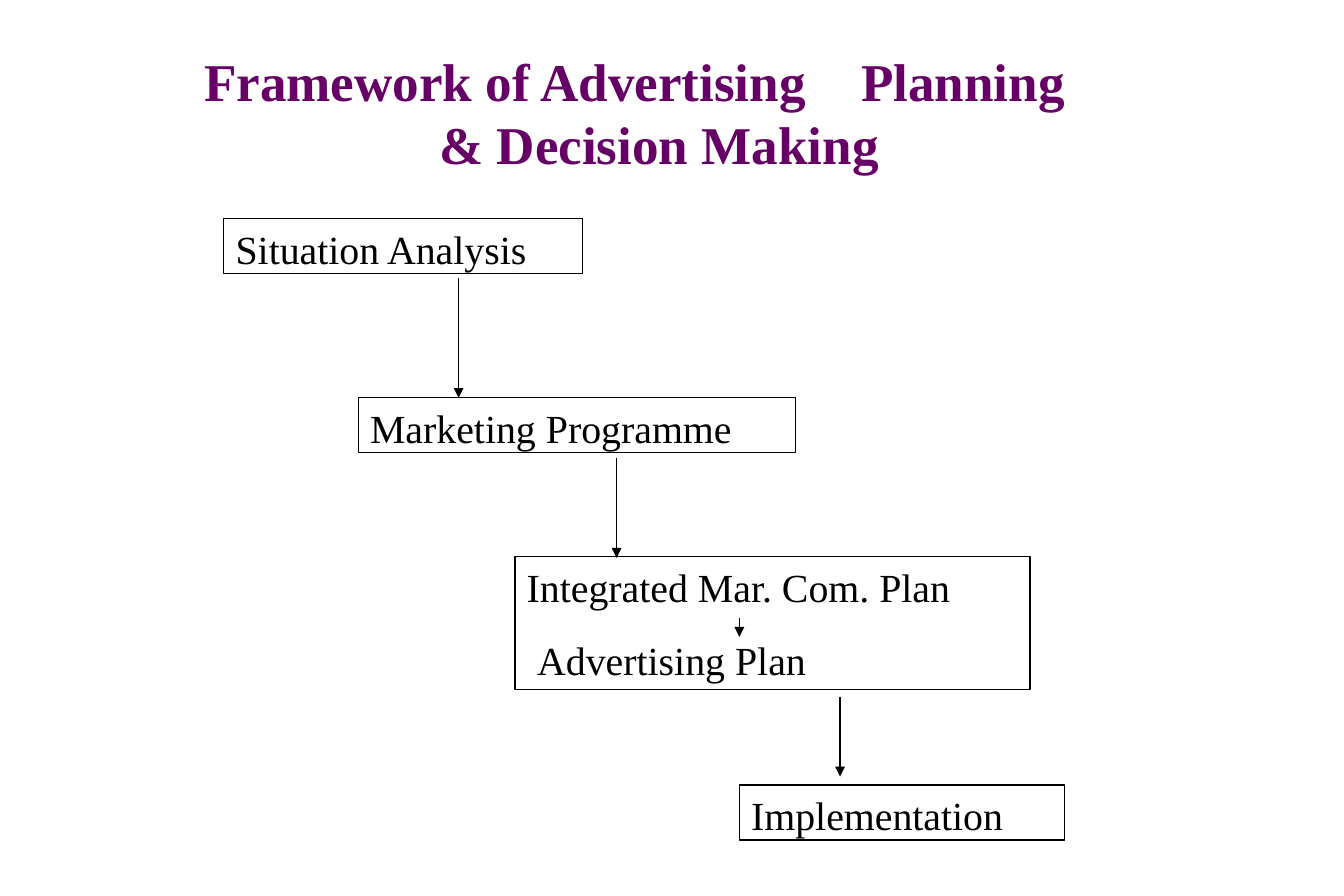
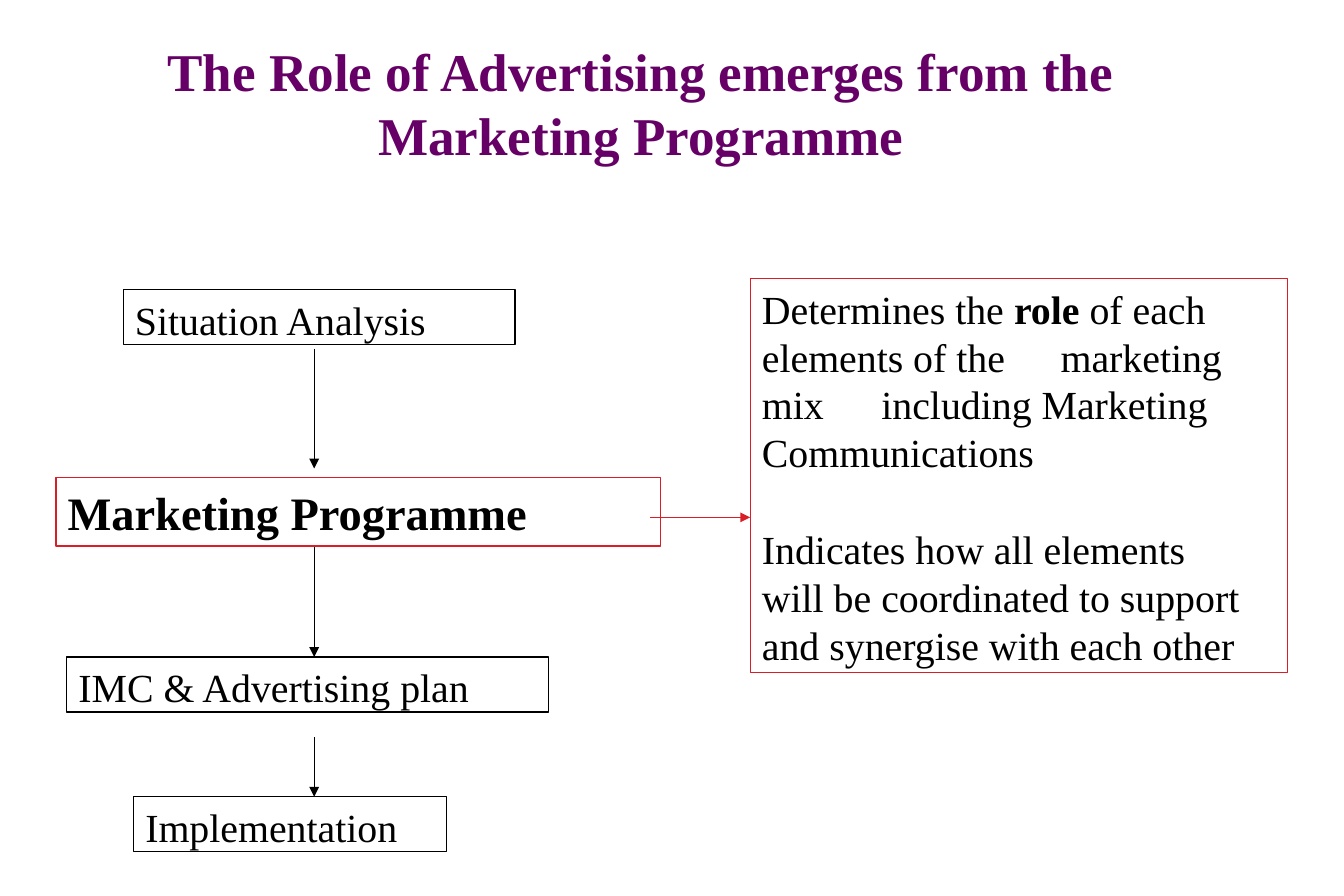
from dataclasses import dataclass

from lxml import etree
from pptx import Presentation
from pptx.dml.color import RGBColor
from pptx.enum.shapes import MSO_CONNECTOR, MSO_SHAPE
from pptx.enum.text import MSO_ANCHOR, MSO_AUTO_SIZE, PP_ALIGN
from pptx.oxml.ns import qn
from pptx.util import Cm, Pt

RECTANGLE = MSO_SHAPE.RECTANGLE
STRAIGHT = MSO_CONNECTOR.STRAIGHT
TOP = MSO_ANCHOR.TOP
LEFT = PP_ALIGN.LEFT
NO_AUTO_SIZE = MSO_AUTO_SIZE.NONE

FONT = "Times New Roman"
PURPLE, BLACK, RED = "660066", "000000", "D91E27"
TITLE_SIZE, BODY_SIZE, KEY_SIZE = 32, 24, 28
LINE_PITCH = 1.2
TITLE_LAYOUT = 5
ROW_HEIGHT = 1.17
FLOW_X = 6.68


@dataclass(frozen=True)
class TextLine:
    """A paragraph: \\n breaks the line, ** switches bold; lengths in cm."""
    text: str
    indent: float = 0
    space_before: float = 0
    tabs: tuple[float, ...] = ()


@dataclass(frozen=True)
class Title:
    left: float
    top: float
    width: float
    lines: tuple[TextLine, ...]


@dataclass(frozen=True)
class Box:
    left: float
    top: float
    width: float
    lines: tuple[TextLine, ...]
    height: float = ROW_HEIGHT
    colour: str = BLACK
    size: int = BODY_SIZE
    bold: bool = False


@dataclass(frozen=True)
class Arrow:
    start: tuple[float, float]
    end: tuple[float, float]
    colour: str = BLACK


@dataclass(frozen=True)
class FlowSlide:
    title: Title
    boxes: tuple[Box, ...]
    arrows: tuple[Arrow, ...]


def down_arrow(x: float, top: float, bottom: float) -> Arrow:
    return Arrow((x, top), (x, bottom))


FLOW_SLIDES = (
    FlowSlide(
        Title(4.34, 0.94, 20.09, (
            TextLine("Framework of Advertising\tPlanning", tabs=(15.15,)),
            TextLine("& Decision Making", indent=5),
        )),
        (
            Box(4.76, 4.65, 7.62, (TextLine("Situation Analysis"),)),
            Box(7.62, 8.46, 9.3, (TextLine("Marketing Programme"),)),
            Box(10.95, 11.84, 10.95, (
                TextLine("Integrated Mar. Com. Plan"),
                TextLine("Advertising Plan", indent=0.22, space_before=15),
            ), height=2.82),
            Box(15.72, 16.69, 6.91, (TextLine("Implementation"),)),
        ),
        (
            down_arrow(9.75, 5.92, 8.46),
            down_arrow(13.11, 9.73, 11.86),
            down_arrow(17.86, 14.81, 16.51),
            down_arrow(15.72, 13.13, 13.54),
        ),
    ),
    FlowSlide(
        Title(3.56, 0.74, 21.67, (
            TextLine("The Role of Advertising emerges from the"),
            TextLine("Marketing Programme", indent=4.48),
        )),
        (
            Box(2.62, 6.15, 8.33, (TextLine("Situation Analysis"),)),
            Box(1.19, 10.16, 12.85, (TextLine("Marketing Programme"),),
                height=1.45, colour=RED, size=KEY_SIZE, bold=True),
            Box(15.95, 5.92, 11.43, (
                TextLine("Determines the **role** of each\n"
                         "elements of the\tmarketing\n"
                         "mix\tincluding Marketing\n"
                         "Communications", tabs=(1.98, 5.84)),
                TextLine("Indicates how all elements\n"
                         "will be coordinated to support\n"
                         "and synergise with each other", space_before=29.5),
            ), height=8.38, colour=RED),
            Box(1.42, 13.97, 10.24, (TextLine("IMC & Advertising plan"),)),
            Box(2.84, 16.94, 6.65, (TextLine("Implementation"),)),
        ),
        (
            down_arrow(FLOW_X, 7.42, 9.96),
            down_arrow(FLOW_X, 11.63, 13.97),
            down_arrow(FLOW_X, 15.67, 16.94),
            Arrow((13.82, 11), (15.95, 11), RED),
        ),
    ),
)


def rgb(colour: str) -> RGBColor:
    return RGBColor.from_string(colour)


def apply(target, values: dict) -> None:
    for name, value in values.items():
        setattr(target, name, value)


def add_tabs(paragraph, positions: tuple[float, ...]) -> None:
    tab_list = etree.SubElement(paragraph._p.get_or_add_pPr(), qn("a:tabLst"))
    for position in positions:
        etree.SubElement(tab_list, qn("a:tab"), pos=str(Cm(position)), algn="l")


def write_lines(shape, lines: tuple[TextLine, ...], size: int, colour: str,
                bold: bool, left_inset: float, top_inset: float) -> None:
    frame = shape.text_frame
    apply(frame, {
        "word_wrap": True, "auto_size": NO_AUTO_SIZE, "vertical_anchor": TOP,
        "margin_left": Cm(left_inset), "margin_top": Cm(top_inset),
        "margin_right": 0, "margin_bottom": 0,
    })
    for number, line in enumerate(lines):
        paragraph = frame.add_paragraph() if number else frame.paragraphs[0]
        if line.tabs:
            add_tabs(paragraph, line.tabs)
        apply(paragraph, {
            "alignment": LEFT, "line_spacing": Pt(size * LINE_PITCH),
            "space_before": Pt(line.space_before), "space_after": Pt(0),
        })
        properties = paragraph._p.get_or_add_pPr()
        properties.set("marL", str(Cm(line.indent)))
        properties.set("indent", "0")
        for row, row_text in enumerate(line.text.split("\n")):
            if row:
                paragraph.add_line_break()
            for part, part_text in enumerate(row_text.split("**")):
                run = paragraph.add_run()
                run.text = part_text
                apply(run.font, {"name": FONT, "size": Pt(size),
                                 "bold": bold or part % 2 == 1})
                run.font.color.rgb = rgb(colour)


def draw_title(slide, title: Title) -> None:
    shape = slide.shapes.title
    apply(shape, {"left": Cm(title.left), "top": Cm(title.top),
                  "width": Cm(title.width), "height": Cm(2.77)})
    write_lines(shape, title.lines, TITLE_SIZE, PURPLE, True, 0, 0.08)


def draw_box(slide, box: Box) -> None:
    shape = slide.shapes.add_shape(
        RECTANGLE, Cm(box.left), Cm(box.top), Cm(box.width), Cm(box.height))
    shape.shadow.inherit = False
    shape.fill.background()
    shape.line.color.rgb = rgb(box.colour)
    shape.line.width = Pt(0.75)
    write_lines(shape, box.lines, box.size, BLACK, box.bold, 0.25, 0.13)


def draw_arrow(slide, arrow: Arrow) -> None:
    connector = slide.shapes.add_connector(
        STRAIGHT, *map(Cm, arrow.start), *map(Cm, arrow.end))
    connector.line.color.rgb = rgb(arrow.colour)
    connector.line.width = Pt(0.7)
    etree.SubElement(connector.line._get_or_add_ln(), qn("a:tailEnd"),
                     type="triangle", w="med", len="med")
    etree.SubElement(connector._element.spPr, qn("a:effectLst"))


def main() -> None:
    presentation = Presentation()
    presentation.slide_width = Cm(28.575)
    presentation.slide_height = Cm(19.05)
    for flow in FLOW_SLIDES:
        slide = presentation.slides.add_slide(
            presentation.slide_layouts[TITLE_LAYOUT])
        draw_title(slide, flow.title)
        for box in flow.boxes:
            draw_box(slide, box)
        for arrow in flow.arrows:
            draw_arrow(slide, arrow)
    presentation.save("out.pptx")


if __name__ == "__main__":
    main()
